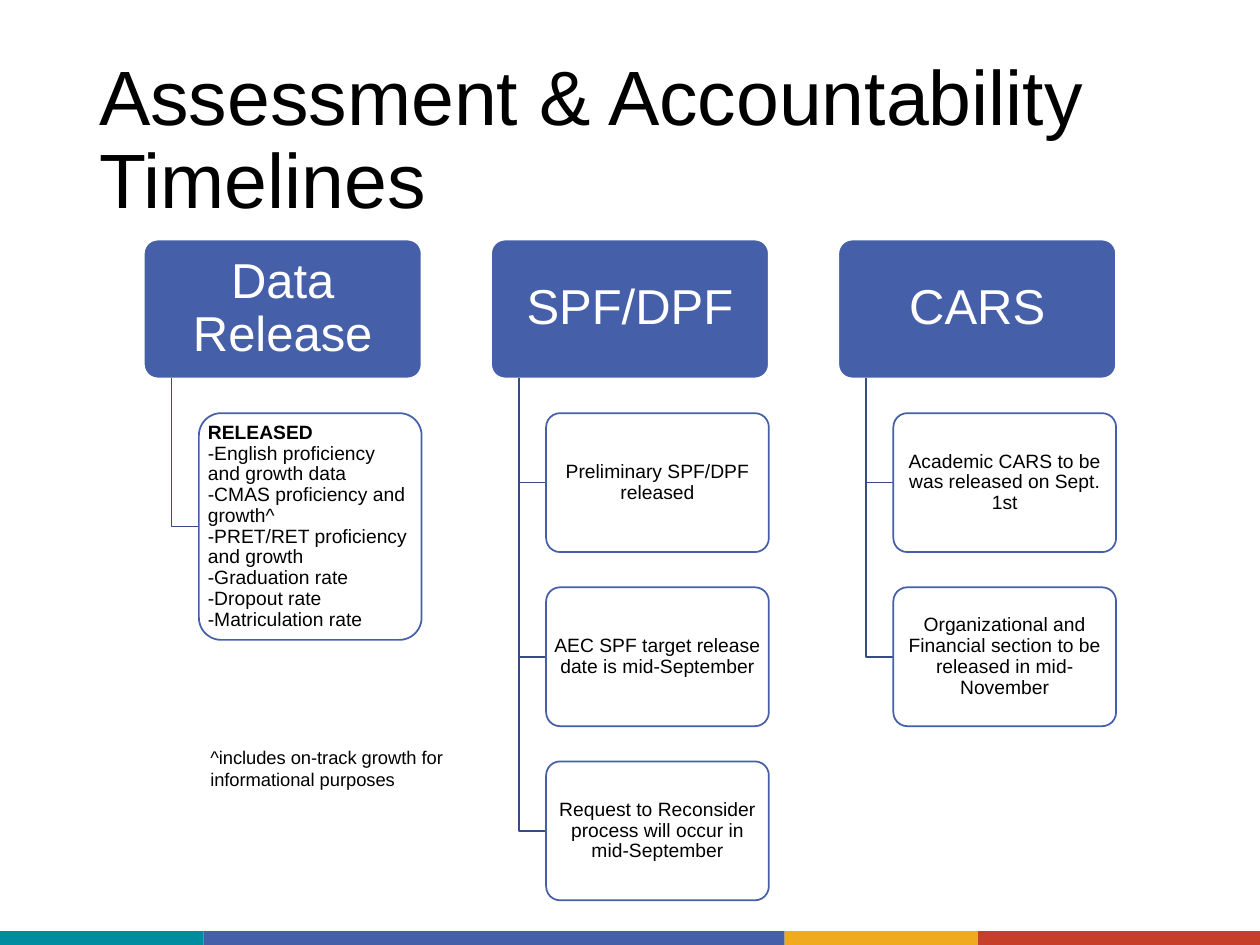
"""Build the assessment and accountability timelines slide."""
from lxml import etree
from pptx import Presentation
from pptx.dml.color import RGBColor
from pptx.enum.shapes import MSO_SHAPE
from pptx.enum.text import MSO_ANCHOR, PP_ALIGN
from pptx.oxml.ns import qn
from pptx.util import Cm, Pt

RECTANGLE = MSO_SHAPE.RECTANGLE
ROUNDED = MSO_SHAPE.ROUNDED_RECTANGLE
MIDDLE = MSO_ANCHOR.MIDDLE
TOP = MSO_ANCHOR.TOP
LEFT = PP_ALIGN.LEFT
CENTER = PP_ALIGN.CENTER

WHITE = RGBColor(0xFF, 0xFF, 0xFF)
BLACK = RGBColor(0x00, 0x00, 0x00)
BLUE = RGBColor(0x45, 0x5F, 0xA9)
DARK_BLUE = RGBColor(0x37, 0x4C, 0x87)
TEAL = RGBColor(0x00, 0x8C, 0xA0)
GOLD = RGBColor(0xEF, 0xAA, 0x1F)
RED = RGBColor(0xC6, 0x3F, 0x28)

BRANCH_LEFT, BRANCH_TOP, BRANCH_STEP = 2.9, 4.83, 7.0
HEADING_WIDTH, BOX_HEIGHT = 5.6, 2.8
TRUNK_INDENT, ITEM_INDENT, ITEM_WIDTH = 0.56, 1.11, 4.49
ITEM_TOP, ITEM_STEP = 8.33, 3.51
RELEASED_HEIGHT = 4.57

BRANCHES = [
    ("Data Release", [[
        "RELEASED",
        "-English proficiency and growth data",
        "-CMAS proficiency and growth^",
        "-PRET/RET proficiency and growth",
        "-Graduation rate",
        "-Dropout rate",
        "-Matriculation rate",
    ]]),
    ("SPF/DPF", [
        ["Preliminary SPF/DPF released"],
        ["AEC SPF target release date is mid-September"],
        ["Request to Reconsider process will occur in mid-September"],
    ]),
    ("CARS", [
        ["Academic CARS to be was released on Sept. 1st"],
        ["Organizational and Financial section to be released in mid-November"],
    ]),
]


def write(shape, lines, size, color, align, anchor=MIDDLE, spacing=0.9, margins=(0.25, 0.13)):
    frame = shape.text_frame
    frame.word_wrap = True
    frame.vertical_anchor = anchor
    frame.margin_left = frame.margin_right = Cm(margins[0])
    frame.margin_top = frame.margin_bottom = Cm(margins[1])
    paragraph = frame.paragraphs[0]
    paragraph.alignment = align
    paragraph.line_spacing = spacing
    for index, line in enumerate(lines):
        if index:
            paragraph.add_line_break()
        run = paragraph.add_run()
        run.text = line
        run.font.name = "Arial"
        run.font.size = Pt(size)
        run.font.bold = len(lines) > 1 and index == 0
        run.font.color.rgb = color


def add_box(kind, left, top, width, height, fill, outline=None):
    box = slide.shapes.add_shape(kind, Cm(left), Cm(top), Cm(width), Cm(height))
    box.shadow.inherit = False
    box.fill.solid()
    box.fill.fore_color.rgb = fill
    if outline is None:
        box.line.fill.background()
    else:
        box.adjustments[0] = 0.1
        box.line.color.rgb = outline
        box.line.width = Pt(1)
    return box


prs = Presentation()
prs.slide_width, prs.slide_height = Cm(25.4), Cm(19.05)
slide = prs.slides.add_slide(prs.slide_layouts[6])

band_left = 0
for band_width, band_color in [(4.1, TEAL), (11.72, BLUE), (3.9, GOLD), (5.68, RED)]:
    add_box(RECTANGLE, band_left, 18.77, band_width, 0.28, band_color)
    band_left += band_width

title = slide.shapes.add_textbox(Cm(1.75), Cm(1.02), Cm(21.9), Cm(3.68))
write(title, ["Assessment & Accountability Timelines"], 44, BLACK, LEFT)

for column, (heading, items) in enumerate(BRANCHES):
    left = BRANCH_LEFT + column * BRANCH_STEP
    heading_box = add_box(ROUNDED, left, BRANCH_TOP, HEADING_WIDTH, BOX_HEIGHT, BLUE, WHITE)
    write(heading_box, [heading], 28, WHITE, CENTER, margins=(0.15, 0.1))

    trunk = left + TRUNK_INDENT
    item_left = left + ITEM_INDENT
    for row, lines in enumerate(items):
        is_list = len(lines) > 1
        height = RELEASED_HEIGHT if is_list else BOX_HEIGHT
        top = ITEM_TOP + row * ITEM_STEP
        middle = Cm(top + height / 2)

        outline = slide.shapes.build_freeform(Cm(trunk), Cm(BRANCH_TOP + BOX_HEIGHT))
        outline.add_line_segments([(Cm(trunk), middle), (Cm(item_left), middle)], close=False)
        elbow = outline.convert_to_shape()
        elbow.shadow.inherit = False
        elbow.fill.background()
        elbow.line.color.rgb = DARK_BLUE
        elbow.line.width = Pt(1)

        item_box = add_box(ROUNDED, item_left, top, ITEM_WIDTH, height, WHITE, BLUE)
        fill_color = item_box.fill._xPr.find(qn("a:solidFill"))[0]
        etree.SubElement(fill_color, qn("a:alpha"), val="90000")
        write(item_box, lines, 11, BLACK, LEFT if is_list else CENTER, margins=(0.05, 0.05))

footnote = slide.shapes.add_textbox(Cm(3.99), Cm(14.91), Cm(6.53), Cm(1.14))
write(footnote, ["^includes on-track growth for informational purposes"], 10.5, BLACK, LEFT, TOP, 1.0)

prs.save("out.pptx")
